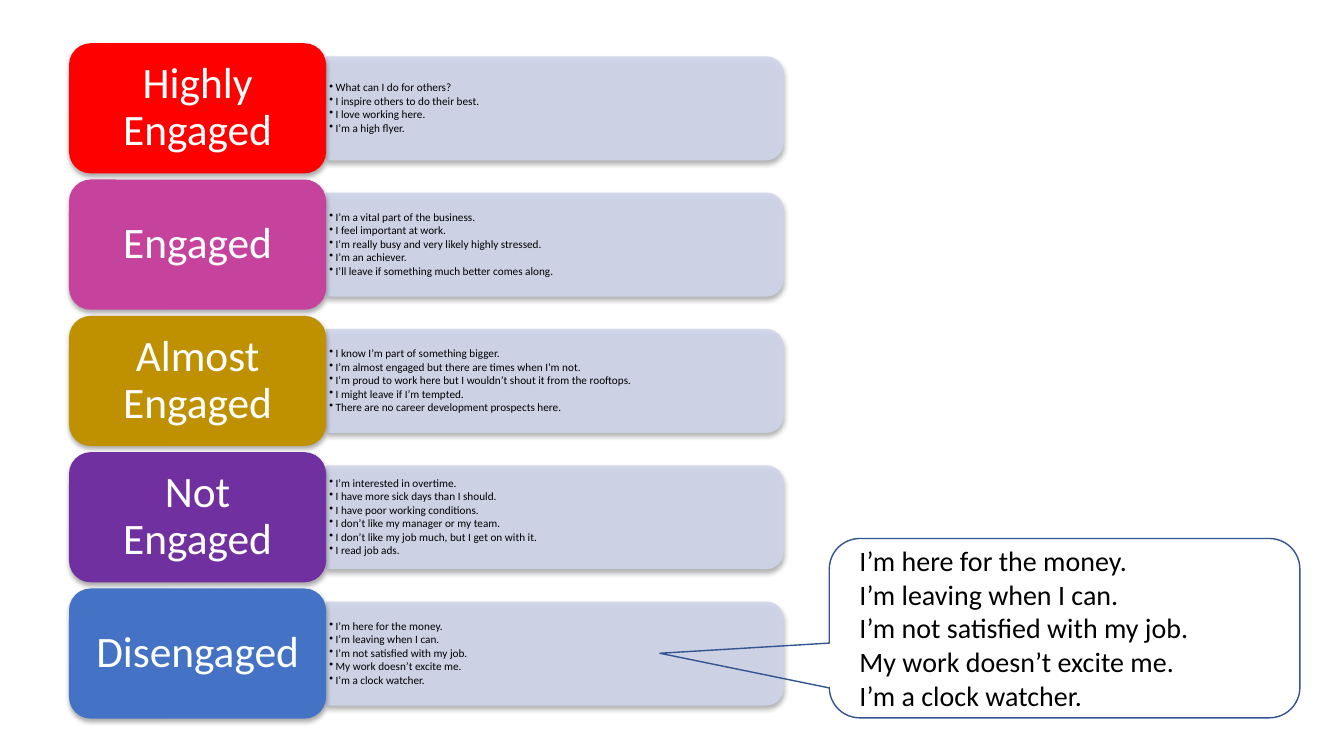
from dataclasses import dataclass

from lxml.etree import SubElement
from pptx import Presentation
from pptx.dml.color import RGBColor
from pptx.enum.shapes import MSO_SHAPE as Preset
from pptx.enum.text import MSO_ANCHOR as Anchor
from pptx.enum.text import MSO_AUTO_SIZE as AutoSize
from pptx.enum.text import PP_ALIGN as Align
from pptx.oxml import parse_xml
from pptx.oxml.ns import nsdecls, qn
from pptx.util import Cm, Pt

COLOURS = {
    "red": "FF0000", "pink": "C5439D", "gold": "BF9000",
    "purple": "7030A0", "blue": "4472C4", "bar": "CFD5EA",
    "outline": "325491", "black": "000000", "white": "FFFFFF",
}
FONT = "Calibri"

# Row geometry in centimetres
FIRST_MIDDLE, ROW_PITCH = 2.73, 3.435
CARD_LEFT, CARD_WIDTH, CARD_HEIGHT = 1.74, 6.48, 3.28
BAR_LEFT, BAR_LENGTH, BAR_THICKNESS = 8.22, 11.53, 2.62
LIST_WIDTH, LIST_HEIGHT = 11.4, 2.36


@dataclass
class Level:
    label: str
    colour: str
    thoughts: list[str]


LEVELS = [
    Level("Highly Engaged", "red", [
        "What can I do for others?",
        "I inspire others to do their best.",
        "I love working here.",
        "I’m a high flyer.",
    ]),
    Level("Engaged", "pink", [
        "I’m a vital part of the business.",
        "I feel important at work.",
        "I’m really busy and very likely highly stressed.",
        "I’m an achiever.",
        "I’ll leave if something much better comes along.",
    ]),
    Level("Almost Engaged", "gold", [
        "I know I’m part of something bigger.",
        "I’m almost engaged but there are times when I’m not.",
        "I’m proud to work here but I wouldn’t shout it from the rooftops.",
        "I might leave if I’m tempted.",
        "There are no career development prospects here.",
    ]),
    Level("Not Engaged", "purple", [
        "I’m interested in overtime.",
        "I have more sick days than I should.",
        "I have poor working conditions.",
        "I don’t like my manager or my team.",
        "I don’t like my job much, but I get on with it.",
        "I read job ads.",
    ]),
    Level("Disengaged", "blue", [
        "I’m here for the money.",
        "I’m leaving when I can.",
        "I’m not satisfied with my job.",
        "My work doesn’t excite me.",
        "I’m a clock watcher.",
    ]),
]

# Text formats
CARD_PARA = {"alignment": Align.CENTER, "line_spacing": 0.9}
LIST_PARA = {"level": 1, "line_spacing": 0.9, "space_after": Pt(1)}
CALLOUT_PARA = {"alignment": Align.LEFT, "line_spacing": 1.0, "space_before": Pt(0)}


def rgb(name: str) -> RGBColor:
    return RGBColor.from_string(COLOURS[name])


def apply(target, values: dict) -> None:
    for name, value in values.items():
        setattr(target, name, value)


def set_bullet(para, char: str | None, indent: float) -> None:
    properties = para._p.get_or_add_pPr()
    properties.set("marL", str(Cm(indent)))
    properties.set("indent", str(-Cm(indent)))
    if char:
        SubElement(properties, qn("a:buChar")).set("char", char)
    else:
        SubElement(properties, qn("a:buNone"))


def write(box, lines: list[str], size: float, colour: str, para_format: dict,
          anchor: Anchor, inset_x: float, inset_y: float) -> list:
    frame = box.text_frame
    apply(frame, {
        "word_wrap": True, "auto_size": AutoSize.NONE, "vertical_anchor": anchor,
        "margin_left": Cm(inset_x), "margin_right": Cm(inset_x),
        "margin_top": Cm(inset_y), "margin_bottom": Cm(inset_y),
    })
    for index, line in enumerate(lines):
        para = frame.add_paragraph() if index else frame.paragraphs[0]
        apply(para, para_format)
        span = para.add_run()
        span.text = line
        apply(span.font, {"name": FONT, "size": Pt(size)})
        span.font.color.rgb = rgb(colour)
    return list(frame.paragraphs)


def add_block(page, preset: Preset, left: float, top: float, width: float,
              height: float, colour: str):
    """Add a borderless filled shape with a soft shadow below it."""
    block = page.shapes.add_shape(preset, Cm(left), Cm(top), Cm(width), Cm(height))
    block.fill.solid()
    block.fill.fore_color.rgb = rgb(colour)
    block.line.fill.background()
    block.shadow.inherit = False
    block._element.spPr.find(qn("a:effectLst")).append(parse_xml(
        f'<a:outerShdw {nsdecls("a")} blurRad="{Pt(3.5)}" dist="{Pt(2.2)}" '
        f'dir="5400000" algn="ctr" rotWithShape="0"><a:srgbClr val="{COLOURS["black"]}">'
        '<a:alpha val="32000"/></a:srgbClr></a:outerShdw>'))
    return block


def add_level(page, level: Level, middle: float) -> None:
    # Bar, turned so that its rounded end points right
    bar = add_block(page, Preset.ROUND_2_SAME_RECTANGLE,
                    BAR_LEFT + (BAR_LENGTH - BAR_THICKNESS) / 2, middle - BAR_LENGTH / 2,
                    BAR_THICKNESS, BAR_LENGTH, "bar")
    bar.rotation = 90
    bar_colour = bar._element.spPr.find(qn("a:solidFill"))[0]
    SubElement(bar_colour, qn("a:alpha")).set("val", "90000")

    # Thoughts on the bar
    box = page.shapes.add_textbox(Cm(BAR_LEFT), Cm(middle - LIST_HEIGHT / 2),
                                  Cm(LIST_WIDTH), Cm(LIST_HEIGHT))
    for para in write(box, level.thoughts, 8, "black", LIST_PARA, Anchor.MIDDLE, 0.08, 0.05):
        set_bullet(para, "•", 0.16)

    # Label card
    card = add_block(page, Preset.ROUNDED_RECTANGLE, CARD_LEFT, middle - CARD_HEIGHT / 2,
                     CARD_WIDTH, CARD_HEIGHT, level.colour)
    write(card, [level.label], 31, "white", CARD_PARA, Anchor.MIDDLE, 0.33, 0.15)


def add_callout(page, body, thoughts: list[str]) -> None:
    # Speech bubble outline
    bubble = page.shapes.add_shape(Preset.ROUNDED_RECTANGULAR_CALLOUT,
                                   Cm(20.9), Cm(13.57), Cm(11.86), Cm(4.52))
    bubble.fill.background()
    bubble.line.color.rgb = rgb("outline")
    bubble.line.width = Pt(1)
    bubble.shadow.inherit = False
    for index, value in enumerate((-0.86, 0.14, 0.17)):
        bubble.adjustments[index] = value

    # Text in the body placeholder
    apply(body, {"left": Cm(21.41), "top": Cm(13.57), "width": Cm(10.31), "height": Cm(4.52)})
    for para in write(body, thoughts, 20, "black", CALLOUT_PARA, Anchor.TOP, 0.25, 0.13):
        set_bullet(para, None, 0)


def main() -> None:
    deck = Presentation()
    apply(deck, {"slide_width": Cm(33.87), "slide_height": Cm(19.05)})
    page = deck.slides.add_slide(deck.slide_layouts.get_by_name("Title and Content"))
    title = page.shapes.title._element
    title.getparent().remove(title)

    for row, level in enumerate(LEVELS):
        add_level(page, level, FIRST_MIDDLE + row * ROW_PITCH)
    add_callout(page, page.placeholders[1], LEVELS[-1].thoughts)
    deck.save("out.pptx")


if __name__ == "__main__":
    main()
